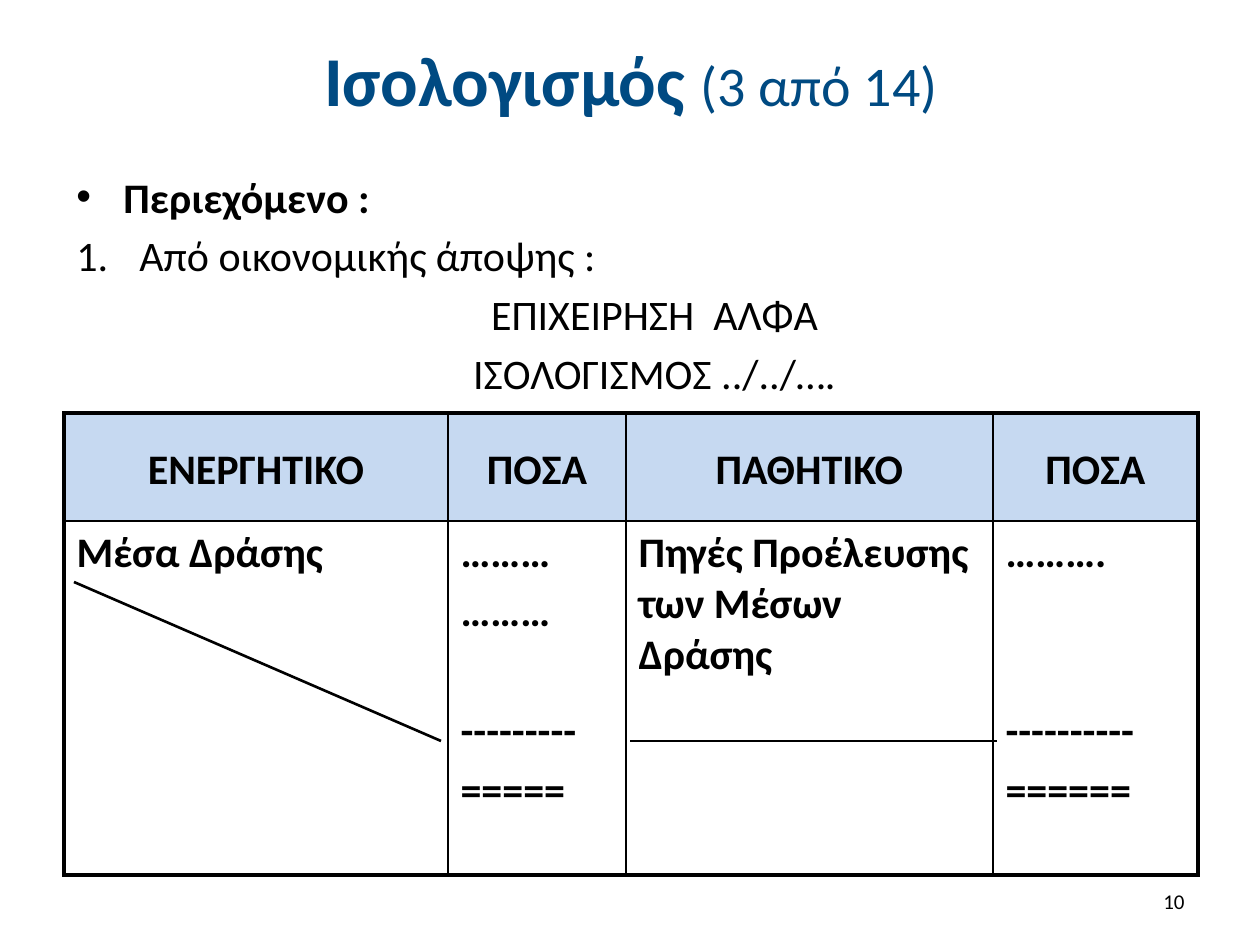
from lxml import etree
from pptx import Presentation
from pptx.dml.color import RGBColor
from pptx.enum.shapes import MSO_CONNECTOR
from pptx.enum.text import MSO_ANCHOR, PP_ALIGN
from pptx.oxml.ns import qn
from pptx.util import Emu, Pt

LEFT, CENTER, RIGHT = PP_ALIGN.LEFT, PP_ALIGN.CENTER, PP_ALIGN.RIGHT
MIDDLE = MSO_ANCHOR.MIDDLE
LINE = MSO_CONNECTOR.STRAIGHT
SCALE = 914400 / 126
BLACK, NAVY, PALE = "000000", "004A82", "C6D9F1"
GAP, BLANK = 4.8, 34  # points: paragraph gap, height of one empty line
COLS, ROWS = (384, 178, 367, 205), (108, 354)
HEADS = ("ENEΡΓΗΤΙΚΟ", "ΠΟΣΑ", "ΠΑΘΗΤΙΚΟ", "ΠΟΣΑ")
# Each entry: text and the number of empty lines above it
ENTRIES = (
    [("Μέσα Δράσης", 0)],
    [("………", 0), ("………", 0), ("---------", 1), ("=====", 0)],
    [("Πηγές Προέλευσης των Μέσων Δράσης", 0)],
    [("……….", 0), ("----------", 2), ("======", 0)],
)


def px(n):
    return Emu(round(n * SCALE))


def color(code):
    return RGBColor.from_string(code)


def add_run(para, text, size=24, bold=False, code=BLACK):
    run = para.add_run()
    run.text = text
    look = {"name": "Calibri", "size": Pt(size), "bold": bold}
    for key, value in look.items():
        setattr(run.font, key, value)
    run.font.color.rgb = color(code)


def add_para(frame, first, align=LEFT, gap=GAP):
    para = frame.paragraphs[0] if first else frame.add_paragraph()
    para.alignment = align
    para.space_before = Pt(0 if first else gap)
    return para


def add_mark(para, indent, tag, **attrs):
    """Give a paragraph a hanging bullet or number."""
    props = para._p.get_or_add_pPr()
    props.set("marL", str(px(indent)))
    props.set("indent", str(-px(indent)))
    if tag == "a:buChar":
        etree.SubElement(props, qn("a:buFont"), typeface="Arial")
    etree.SubElement(props, qn(tag), **attrs)


def add_box(slide, x, y, w, h):
    frame = slide.shapes.add_textbox(px(x), px(y), px(w), px(h)).text_frame
    frame.word_wrap = True
    return frame


def set_title(slide):
    title = slide.shapes.title
    place = {"left": 64, "top": 16, "width": 1134, "height": 125}
    for key, value in place.items():
        setattr(title, key, px(value))
    title.text_frame.vertical_anchor = MIDDLE
    para = add_para(title.text_frame, True, CENTER)
    add_run(para, "Ισολογισμός ", 40, True, NAVY)
    add_run(para, "(3 από 14)", 32, False, NAVY)


def add_body(slide):
    frame = add_box(slide, 64, 165, 1181, 277)
    para = add_para(frame, True)
    add_mark(para, 47, "a:buChar", char="•")
    add_run(para, "Περιεχόμενο :", bold=True)
    para = add_para(frame, False)
    add_mark(para, 63, "a:buAutoNum", type="arabicPeriod")
    add_run(para, "Από οικονομικής άποψης :")
    for text in ("ΕΠΙΧΕΙΡΗΣΗ  ΑΛΦΑ", "ΙΣΟΛΟΓΙΣΜΟΣ ../../…."):
        add_run(add_para(frame, False, CENTER), text)


def set_edges(cell, thick):
    """Draw black borders, heavier on the sides named in thick."""
    props = cell._tc.get_or_add_tcPr()
    for side in "LRTB":
        width = Pt(2.25 if side in thick else 1)
        edge = etree.SubElement(props, qn("a:ln" + side), w=str(width))
        fill = etree.SubElement(edge, qn("a:solidFill"))
        etree.SubElement(fill, qn("a:srgbClr"), val=BLACK)


def add_table(slide):
    table = slide.shapes.add_table(
        len(ROWS), len(COLS), px(64), px(413), px(sum(COLS)), px(sum(ROWS))
    ).table
    for row, high in zip(table.rows, ROWS):
        row.height = px(high)
    for i, wide in enumerate(COLS):
        table.columns[i].width = px(wide)
        side = {0: "L", len(COLS) - 1: "R"}.get(i, "")
        head, cell = table.cell(0, i), table.cell(1, i)
        set_edges(head, side + "T")
        set_edges(cell, side + "B")
        head.fill.solid()
        head.fill.fore_color.rgb = color(PALE)
        cell.fill.background()
        para = add_para(head.text_frame, True, CENTER)
        para.line_spacing = 1.5
        add_run(para, HEADS[i], bold=True)
        for j, (text, blanks) in enumerate(ENTRIES[i]):
            para = add_para(cell.text_frame, j == 0, gap=GAP + BLANK * blanks)
            add_run(para, text, bold=True)


def add_line(slide, *ends):
    line = slide.shapes.add_connector(LINE, *map(px, ends))
    line.line.color.rgb = color(BLACK)
    line.line.width = Pt(1.5)
    etree.SubElement(line._element.spPr, qn("a:effectLst"))


def add_number(slide):
    frame = add_box(slide, 903, 876, 294, 50)
    frame.vertical_anchor = MIDDLE
    add_run(add_para(frame, True, RIGHT), "10", 12)


def main():
    deck = Presentation()
    deck.slide_width, deck.slide_height = px(1260), px(945)
    slide = deck.slides.add_slide(deck.slide_layouts[5])
    set_title(slide)
    add_body(slide)
    add_table(slide)
    add_line(slide, 630, 741, 997, 741)
    add_line(slide, 74, 582, 441, 741)
    add_number(slide)
    deck.save("out.pptx")


if __name__ == "__main__":
    main()
